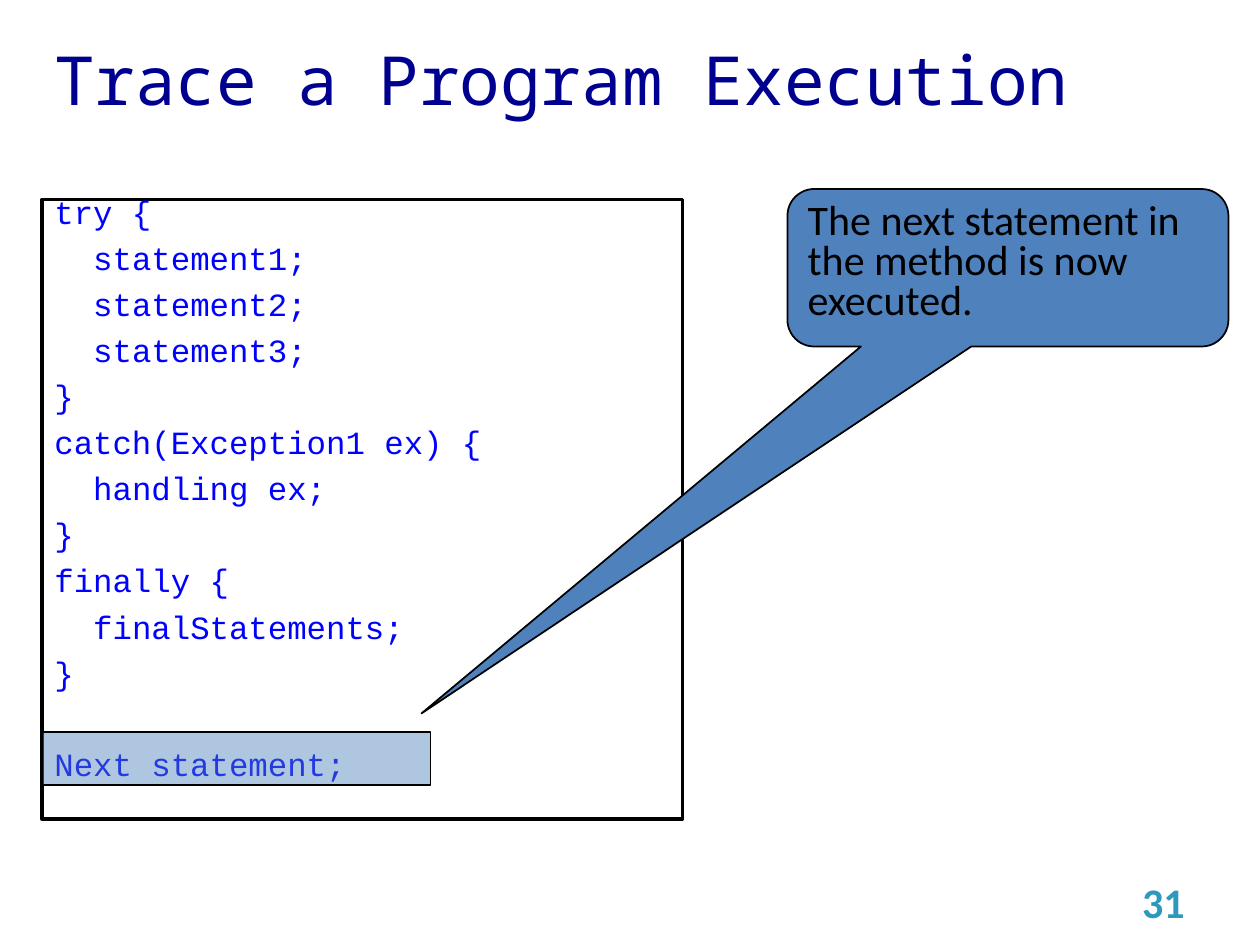
import pptx
import pptx.util
import pptx.dml.color
import pptx.enum.shapes
import pptx.enum.text
import pptx.oxml.ns
import lxml.etree

Pt = pptx.util.Pt
SHAPE = pptx.enum.shapes.MSO_SHAPE
ANCHOR = pptx.enum.text.MSO_ANCHOR
ALIGN = pptx.enum.text.PP_ALIGN


def color(hex_string):
    return pptx.dml.color.RGBColor.from_string(hex_string)


def write(paragraph, text, font_values, paragraph_values):
    """Fill one paragraph and apply its format values."""
    run = paragraph.add_run()
    run.text = text
    for name, value in font_values.items():
        if name == "color":
            run.font.color.rgb = color(value)
        else:
            setattr(run.font, name, value)
    for name, value in paragraph_values.items():
        setattr(paragraph, name, value)


presentation = pptx.Presentation()
presentation.slide_width = Pt(720)
presentation.slide_height = Pt(540)
slide = presentation.slides.add_slide(presentation.slide_layouts[6])

# Title and slide number
title_font = {"name": "Noto Sans Mono", "size": Pt(38.7), "color": "000090"}
number_font = {"name": "Calibri", "size": Pt(24), "bold": True, "color": "2E98BD"}
labels = [
    ("Trace a Program Execution", (24, 24, 642, 42), title_font, ALIGN.LEFT),
    ("31", (516, 500.5, 168, 29), number_font, ALIGN.RIGHT),
]
for text, box, font_values, alignment in labels:
    label = slide.shapes.add_textbox(*map(Pt, box))
    label.text_frame.word_wrap = True
    label.text_frame.vertical_anchor = ANCHOR.MIDDLE
    write(label.text_frame.paragraphs[0], text, font_values, {"alignment": alignment})

# Code box, highlight bar and callout, from back to front
panels = [
    (SHAPE.RECTANGLE, (24, 114, 366, 354), "FFFFFF", 2),
    (SHAPE.RECTANGLE, (24, 418.5, 222, 30), "4F81BD", 1),
    (SHAPE.ROUNDED_RECTANGULAR_CALLOUT, (450, 108, 252, 90), "4F81BD", 1),
]
shapes = []
for preset, box, fill, line_width in panels:
    shape = slide.shapes.add_shape(preset, *map(Pt, box))
    shape.shadow.inherit = False
    shape.fill.solid()
    shape.fill.fore_color.rgb = color(fill)
    shape.line.color.rgb = color("000000")
    shape.line.width = Pt(line_width)
    shape.text_frame.word_wrap = True
    shape.text_frame.vertical_anchor = ANCHOR.TOP
    shapes.append(shape)
code_box, highlight, callout = shapes

# Code lines: (indent level, text, blank lines above)
code_lines = [
    (0, "try {", 0),
    (1, "statement1;", 0),
    (1, "statement2;", 0),
    (1, "statement3;", 0),
    (0, "}", 0),
    (0, "catch(Exception1 ex) {", 0),
    (1, "handling ex;", 0),
    (0, "}", 0),
    (0, "finally {", 0),
    (1, "finalStatements;", 0),
    (0, "}", 0),
    (0, "Next statement;", 1),
]
code_font = {"name": "Courier New", "size": Pt(18.5), "color": "0000FF"}
line_pitch, space_before, indent_step = 25.6, 13, 22.2
code_frame = code_box.text_frame
for index, (level, text, blank_lines) in enumerate(code_lines):
    paragraph = code_frame.add_paragraph() if index else code_frame.paragraphs[0]
    write(paragraph, text, code_font, {
        "alignment": ALIGN.LEFT,
        "line_spacing": 0.6,
        "space_before": Pt(space_before + blank_lines * line_pitch),
    })
    paragraph._p.get_or_add_pPr().set("marL", str(Pt(level * indent_step)))

# Highlight transparency
fill_color = highlight.fill._xPr.find(".//" + pptx.oxml.ns.qn("a:srgbClr"))
lxml.etree.SubElement(fill_color, pptx.oxml.ns.qn("a:alpha"), val="45000")

# Callout pointer and text
for index, value in enumerate((-1.33, 2.83, 0.17)):
    callout.adjustments[index] = value
write(callout.text_frame.paragraphs[0],
      "The next statement in the method is now executed.",
      {"name": "Calibri", "size": Pt(24), "color": "000000"},
      {"alignment": ALIGN.LEFT, "line_spacing": 0.8, "space_before": Pt(4.8)})

presentation.save("out.pptx")
